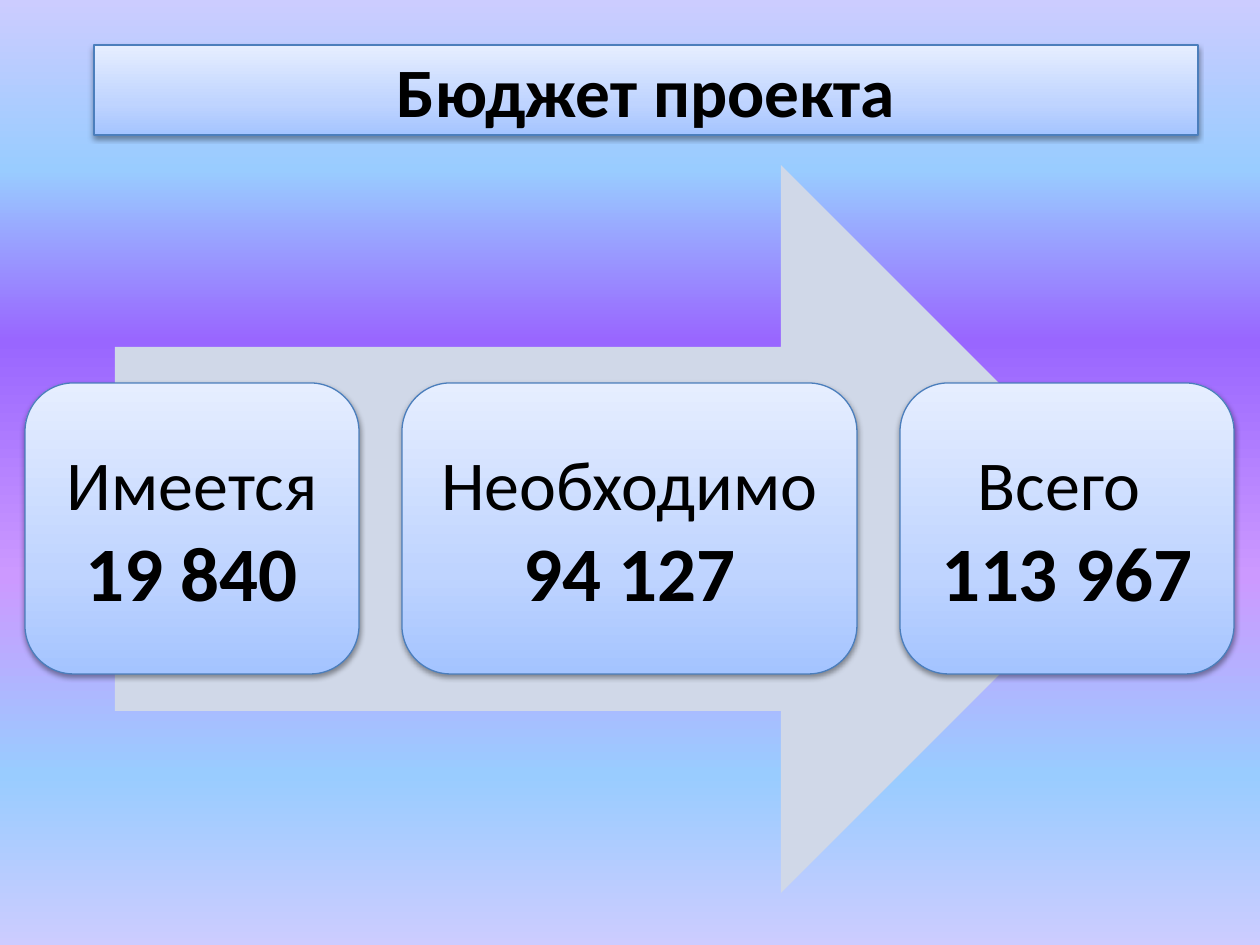
from dataclasses import dataclass

from lxml import etree
from pptx import Presentation
from pptx import util as u
from pptx.dml.color import RGBColor
from pptx.enum import shapes, text
from pptx.oxml import ns, parse_xml

SCALE = 914400 // 126  # EMU in one px


def px(length):
    return u.Emu(length * SCALE)


@dataclass(frozen=True)
class Theme:
    font: str = "Calibri"
    ink: str = "000000"
    edge: str = "4B7EBC"
    arrow: str = "D0D8E8"
    panel: tuple = ((0, "A4C4FF"), (35, "BFD4FF"), (100, "E6EEFF"))
    sky: tuple = ((0, "CCCCFF"), (18, "99CCFF"), (36, "9966FF"),
                  (61, "CC99FF"), (82, "99CCFF"), (100, "CCCCFF"))
    title_size: float = 39.6
    label_size: int = 40
    amount_size: int = 44


class SlideBuilder:
    def __init__(self, page, theme):
        self.page = page
        self.theme = theme

    def gradient(self, owner, fill, stops, angle):
        """Fill with any number of colour stops; angle is counter-clockwise."""
        fill.gradient()
        fill.gradient_angle = angle
        stop_list = next(owner.iter(ns.qn("a:gsLst")))
        for stop in list(stop_list):
            stop_list.remove(stop)
        for position, colour in stops:
            stop = etree.SubElement(stop_list, ns.qn("a:gs"), pos=str(position * 1000))
            etree.SubElement(stop, ns.qn("a:srgbClr"), val=colour)

    def background(self):
        self.gradient(self.page.element, self.page.background.fill, self.theme.sky, 270)

    def panel_style(self, shape):
        """Blue gradient, thin edge and a soft shadow below."""
        self.gradient(shape.element, shape.fill, self.theme.panel, 90)
        shape.line.color.rgb = RGBColor.from_string(self.theme.edge)
        shape.line.width = u.Pt(0.75)
        shape.shadow.inherit = False
        effects = next(shape.element.iter(ns.qn("a:effectLst")))
        effects.append(parse_xml(
            f'<a:outerShdw {ns.nsdecls("a")} blurRad="{u.Pt(3.1)}" dist="{u.Pt(1.6)}" '
            'dir="5400000" rotWithShape="0"><a:srgbClr val="000000">'
            '<a:alpha val="38000"/></a:srgbClr></a:outerShdw>'))

    def span(self, para, words, size, bold=False):
        para.alignment = text.PP_ALIGN.CENTER
        span = para.add_run()
        span.text = words
        span.font.name = self.theme.font
        span.font.size = u.Pt(size)
        span.font.bold = bold
        span.font.color.rgb = RGBColor.from_string(self.theme.ink)

    def title(self, words, left, top, width, height):
        box = self.page.shapes.title
        box.left, box.top, box.width, box.height = map(px, (left, top, width, height))
        self.panel_style(box)
        frame = box.text_frame
        frame.auto_size = text.MSO_AUTO_SIZE.NONE
        frame.vertical_anchor = text.MSO_ANCHOR.MIDDLE
        self.span(frame.paragraphs[0], words, self.theme.title_size, True)

    def shape(self, kind, *place):
        return self.page.shapes.add_shape(kind, *map(px, place))

    def arrow(self, *place):
        arrow = self.shape(shapes.MSO_SHAPE.RIGHT_ARROW, *place)
        arrow.shadow.inherit = False
        arrow.fill.solid()
        arrow.fill.fore_color.rgb = RGBColor.from_string(self.theme.arrow)
        arrow.line.fill.background()

    def card(self, label, amount, wraps, *place):
        """Label above amount; with wraps, both share one wrapped paragraph."""
        box = self.shape(shapes.MSO_SHAPE.ROUNDED_RECTANGLE, *place)
        self.panel_style(box)
        frame = box.text_frame
        frame.word_wrap = True
        frame.vertical_anchor = text.MSO_ANCHOR.MIDDLE
        frame.margin_left = frame.margin_right = px(21)
        frame.margin_top = frame.margin_bottom = px(21)
        para = frame.paragraphs[0]
        self.span(para, label, self.theme.label_size)
        if not wraps:
            para = frame.add_paragraph()
        self.span(para, amount, self.theme.amount_size, True)


def main():
    deck = Presentation()
    deck.slide_width, deck.slide_height = px(1260), px(945)
    page = deck.slides.add_slide(deck.slide_layouts.get_by_name("Title Only"))
    builder = SlideBuilder(page, Theme())
    builder.background()
    builder.title("Бюджет проекта", 94, 45, 1104, 90)
    builder.arrow(115, 165, 1030, 728)

    cards = [("Имеется ", "19 840", False, 334),
             ("Необходимо ", "94 127", True, 455),
             ("Всего ", "113 967", False, 334)]
    left, gap = 25, 43
    for label, amount, wraps, width in cards:
        builder.card(label, amount, wraps, left, 383, width, 291)
        left += width + gap
    deck.save("out.pptx")


if __name__ == "__main__":
    main()
